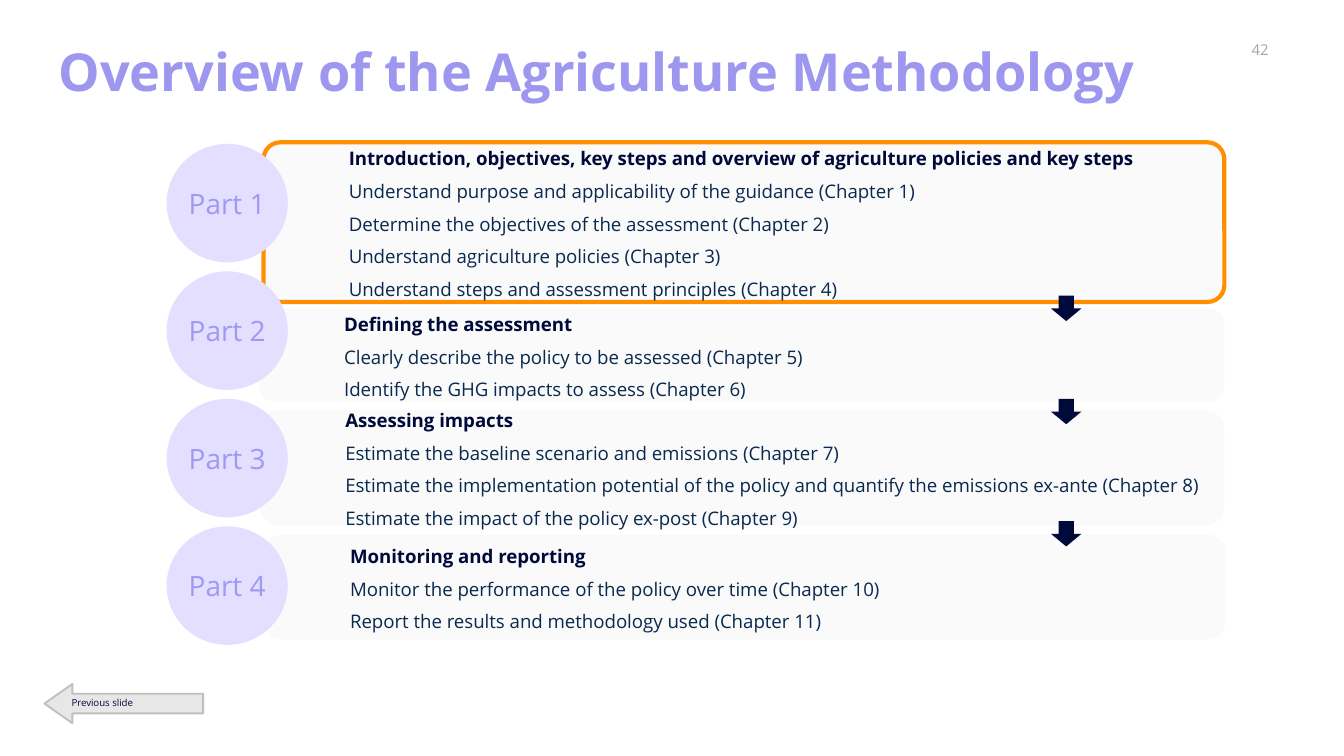
from pptx import Presentation
from pptx.dml.color import RGBColor
from pptx.enum.shapes import MSO_SHAPE
from pptx.enum.text import MSO_ANCHOR, PP_ALIGN
from pptx.util import Cm, Pt

FONT = "Open Sans"
NAVY = RGBColor(0x00, 0x0A, 0x3A)
BLUE = RGBColor(0x09, 0x29, 0x4E)
VIOLET = RGBColor(0x9D, 0x97, 0xF0)
LILAC = RGBColor(0x9E, 0x99, 0xF2)
PALE = RGBColor(0xE4, 0xDE, 0xFF)
PANEL = RGBColor(0xFA, 0xFA, 0xFA)
ORANGE = RGBColor(0xFF, 0x8E, 0x00)
GREY = RGBColor(0xA5, 0xA5, 0xA5)
SILVER = RGBColor(0xE7, 0xE7, 0xE7)
EDGE = RGBColor(0xBF, 0xBF, 0xBF)

PARTS = [
    ((4.98, 2.69, 18.16, 3.02), 0.106, ORANGE, [
        "Introduction, objectives, key steps and overview of agriculture policies and key steps",
        "Understand purpose and applicability of the guidance (Chapter 1)",
        "Determine the objectives of the assessment (Chapter 2)",
        "Understand agriculture policies (Chapter 3)",
        "Understand steps and assessment principles (Chapter 4)"]),
    ((4.9, 5.84, 18.24, 1.75), 0.167, None, [
        "Defining the assessment",
        "Clearly describe the policy to be assessed (Chapter 5)",
        "Identify the GHG impacts to assess (Chapter 6)"]),
    ((4.9, 7.75, 18.24, 2.18), 0.167, None, [
        "Assessing impacts",
        "Estimate the baseline scenario and emissions (Chapter 7)",
        "Estimate the implementation potential of the policy and quantify "
        "the emissions ex-ante (Chapter 8)",
        "Estimate the impact of the policy ex-post (Chapter 9)"]),
    ((5.0, 10.11, 18.16, 1.98), 0.167, None, [
        "Monitoring and reporting",
        "Monitor the performance of the policy over time (Chapter 10)",
        "Report the results and methodology used (Chapter 11)"]),
]
ARROWS = [5.54, 7.49, 9.8]


def add_form(slide, kind, box, fill, line=None, width=1):
    form = slide.shapes.add_shape(kind, *map(Cm, box))
    form.shadow.inherit = False
    form.fill.solid()
    form.fill.fore_color.rgb = fill
    if line is None:
        form.line.fill.background()
    else:
        form.line.color.rgb = line
        form.line.width = Pt(width)
    return form


def set_frame(form, inset=True):
    frame = form.text_frame
    frame.word_wrap = True
    frame.vertical_anchor = MSO_ANCHOR.MIDDLE
    side, edge = (Cm(0.25), Cm(0.13)) if inset else (0, 0)
    frame.margin_left = frame.margin_right = side
    frame.margin_top = frame.margin_bottom = edge
    return frame


def add_run(para, text, size, color, bold=False, align=PP_ALIGN.LEFT):
    para.alignment = align
    run = para.add_run()
    run.text = text
    run.font.name = FONT
    run.font.size = Pt(size)
    run.font.bold = bold
    run.font.color.rgb = color


def add_title(slide, box):
    frame = set_frame(slide.shapes.add_textbox(*map(Cm, box)))
    para = frame.paragraphs[0]
    para.line_spacing = 0.9
    add_run(para, "Overview of the Agriculture Methodology", 28, VIOLET, True)


def add_number(slide, box):
    frame = set_frame(slide.shapes.add_textbox(*map(Cm, box)), False)
    add_run(frame.paragraphs[0], "42", 8, GREY, align=PP_ALIGN.CENTER)


def add_panel(slide, box, round_adj, line, texts):
    form = add_form(slide, MSO_SHAPE.ROUNDED_RECTANGLE, box, PANEL, line, 2.25)
    form.adjustments[0] = round_adj
    frame = set_frame(form)
    for i, text in enumerate(texts):
        para = frame.add_paragraph() if i else frame.paragraphs[0]
        props = para._p.get_or_add_pPr()
        props.set("marL", "0")
        props.set("indent", str(Cm(1.27)))
        para.line_spacing = 1.13
        if i:
            para.space_before = Pt(4)
        add_run(para, text, 10, BLUE if i else NAVY, i == 0)


def add_arrow(slide, box):
    form = add_form(slide, MSO_SHAPE.RIGHT_ARROW, box, NAVY)
    form.rotation = 90


def add_badge(slide, box, text):
    form = add_form(slide, MSO_SHAPE.OVAL, box, PALE)
    para = set_frame(form, False).paragraphs[0]
    add_run(para, text, 15, LILAC, align=PP_ALIGN.CENTER)


def add_back(slide, box):
    form = add_form(slide, MSO_SHAPE.LEFT_ARROW, box, SILVER, EDGE)
    form.adjustments[1] = 0.714
    para = set_frame(form).paragraphs[0]
    para.line_spacing = 0.7
    para.space_after = Pt(12)
    add_run(para, "Previous slide", 5.2, NAVY)


def main():
    deck = Presentation()
    deck.slide_width, deck.slide_height = Cm(25.4), Cm(14.29)
    slide = deck.slides.add_slide(deck.slide_layouts[6])
    add_number(slide, (22.81, 0.66, 2.01, 0.56))
    add_back(slide, (0.84, 12.93, 3, 0.74))
    add_title(slide, (0.86, 0.61, 23.67, 1.6))
    for part in PARTS:
        add_panel(slide, *part)
    for top in ARROWS:
        add_arrow(slide, (19.91, top, 0.48, 0.58))
    for i in range(len(PARTS)):
        add_badge(slide, (3.15, 2.72 + i * 2.41, 2.29, 2.24), f"Part {i + 1}")
    deck.save("out.pptx")


if __name__ == "__main__":
    main()
